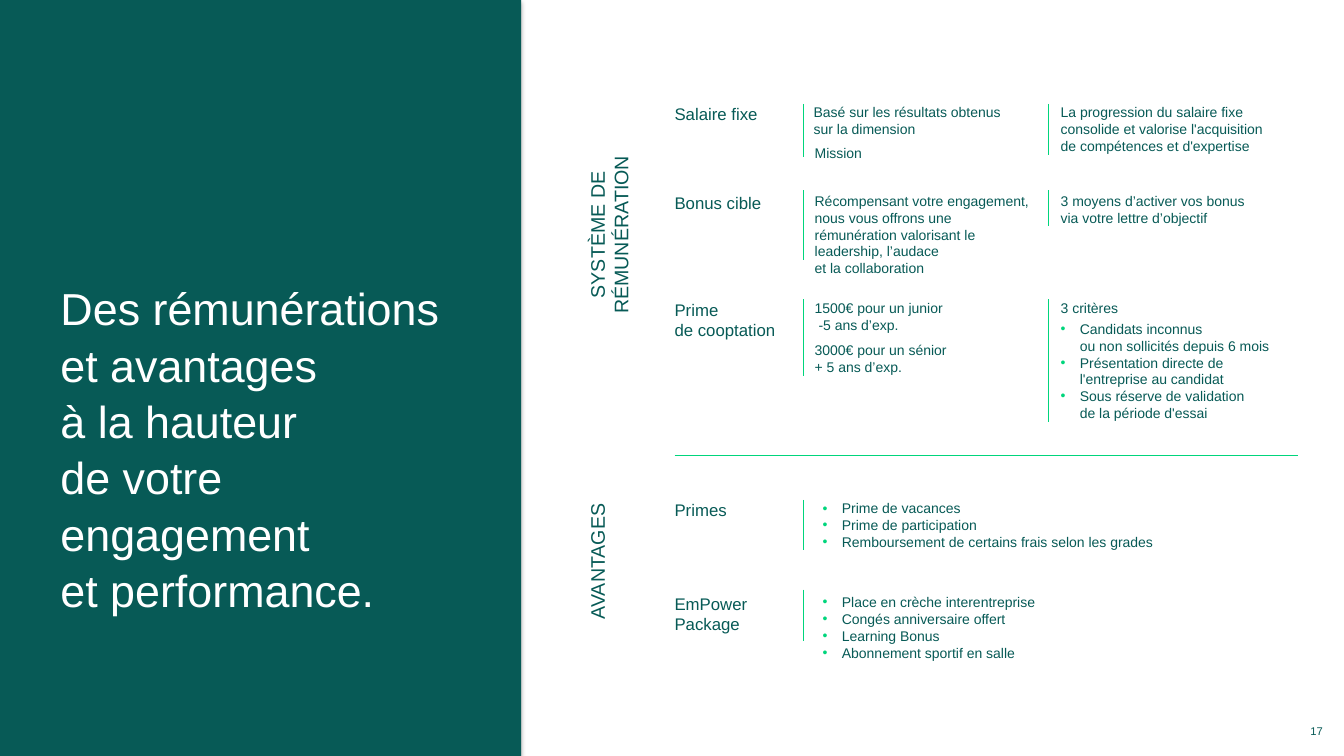
from copy import deepcopy
from dataclasses import dataclass
from typing import Optional

import pptx
import pptx.dml.color
import pptx.enum.shapes
import pptx.enum.text
import pptx.oxml
import pptx.oxml.ns
import pptx.util
from lxml import etree

Inches = pptx.util.Inches
Pt = pptx.util.Pt
qn = pptx.oxml.ns.qn
ALIGN = pptx.enum.text.PP_ALIGN

COLORS = {"teal": "075A56", "green": "00D57C", "white": "FFFFFF", "black": "000000"}
HEADING_LEFT, DETAIL_BAR, NOTE_BAR, NOTE_LEFT = 6.69, 7.97, 10.4, 10.52
BULLET_INDENT = Inches(0.19)

TITLE = {"size": 32, "color": "white", "para": {"alignment": ALIGN.LEFT, "line_spacing": 1.05}}
SECTION = {"size": 14, "color": "teal", "para": {"alignment": ALIGN.CENTER}}
HEADING = {"size": 12, "color": "teal", "para": {"alignment": ALIGN.LEFT}}
BODY = {"size": 10, "color": "teal", "para": {"space_before": Pt(3), "space_after": Pt(3)}}
BULLET = {"size": 10, "color": "teal", "bullet": True, "para": {"space_after": Pt(0)}}
NUMBER = {"size": 8, "color": "teal", "para": {"alignment": ALIGN.RIGHT}}


@dataclass
class Cell:
    left: float
    width: float
    height: float
    bar_end: float
    body: tuple[str, ...] = ()
    bullets: tuple[str, ...] = ()


@dataclass
class Row:
    top: float
    bar_top: float
    heading: str
    heading_height: float
    detail: Cell
    note: Optional[Cell] = None


@dataclass
class Section:
    label: str
    left: float
    top: float
    width: float


SECTIONS = [
    Section("SYSTÈME DE RÉMUNÉRATION", 4.63, 2.21, 2.59),
    Section("AVANTAGES", 5.08, 5.45, 1.69),
]

ROWS = [
    Row(1.03, 1.03, "Salaire fixe", 0.2,
        Cell(8.07, 2.18, 0.34, 1.56, ("Basé sur les résultats obtenus\nsur la dimension",)),
        Cell(NOTE_LEFT, 2.21, 0.5, 1.54,
             ("La progression du salaire fixe consolide et valorise l'acquisition\n"
              "de compétences et d'expertise",))),
    Row(1.91, 1.89, "Bonus cible", 0.2,
        Cell(8.08, 2.18, 0.67, 2.58,
             ("Récompensant votre engagement, nous vous offrons une rémunération "
              "valorisant le leadership, l’audace\net la collaboration",)),
        Cell(NOTE_LEFT, 2.21, 0.34, 2.24,
             ("3 moyens d’activer vos bonus\nvia votre lettre d’objectif",))),
    Row(2.97, 2.97, "Prime\nde cooptation", 0.4,
        Cell(8.08, 2.18, 0.76, 3.73,
             ("1500€ pour un junior\n -5 ans d’exp.", "3000€ pour un sénior\n+ 5 ans d’exp.")),
        Cell(NOTE_LEFT, 2.21, 1.22, 4.19, ("3 critères",),
             ("Candidats inconnus\nou non sollicités depuis 6 mois",
              "Présentation directe de l'entreprise au candidat",
              "Sous réserve de validation\nde la période d'essai"))),
    Row(4.96, 4.96, "Primes", 0.2,
        Cell(8.16, 4.04, 0.5, 5.46, (),
             ("Prime de vacances", "Prime de participation",
              "Remboursement de certains frais selon les grades"))),
    Row(5.89, 5.85, "EmPower Package", 0.4,
        Cell(8.16, 2.18, 0.67, 6.36, (),
             ("Place en crèche interentreprise", "Congés anniversaire offert",
              "Learning Bonus", "Abonnement sportif en salle"))),
]


def rgb(name: str):
    return pptx.dml.color.RGBColor.from_string(COLORS[name])


def add_bullet(p) -> None:
    pPr = p._p.get_or_add_pPr()
    pPr.set("marL", str(BULLET_INDENT))
    pPr.set("indent", str(-BULLET_INDENT))
    color = etree.SubElement(pPr, qn("a:buClr"))
    etree.SubElement(color, qn("a:srgbClr")).set("val", COLORS["green"])
    etree.SubElement(pPr, qn("a:buFont")).set("typeface", "Arial")
    etree.SubElement(pPr, qn("a:buChar")).set("char", "•")


def fill_text(sp, items: list[tuple[str, dict]], wrap: bool = True) -> None:
    tf = sp.text_frame
    frame = {"margin_left": 0, "margin_right": 0, "margin_top": 0, "margin_bottom": 0,
             "word_wrap": wrap, "auto_size": pptx.enum.text.MSO_AUTO_SIZE.NONE,
             "vertical_anchor": pptx.enum.text.MSO_ANCHOR.TOP}
    for name, value in frame.items():
        setattr(tf, name, value)
    for i, (text, style) in enumerate(items):
        p = tf.add_paragraph() if i else tf.paragraphs[0]
        p.text = text
        if style.get("bullet"):
            add_bullet(p)
        for name, value in style["para"].items():
            if i or name != "space_before":
                setattr(p, name, value)
        for r in p.runs:
            for name, value in {"name": "Arial", "size": Pt(style["size"])}.items():
                setattr(r.font, name, value)
            r.font.color.rgb = rgb(style["color"])
        for br in p._p.findall(qn("a:br")):
            br.append(deepcopy(p.runs[0]._r.rPr))


def add_text(s, left: float, top: float, width: float, height: float,
             items: list[tuple[str, dict]], wrap: bool = True):
    sp = s.shapes.add_textbox(Inches(left), Inches(top), Inches(width), Inches(height))
    fill_text(sp, items, wrap)
    return sp


def add_rule(s, x1: float, y1: float, x2: float, y2: float) -> None:
    line = s.shapes.add_connector(pptx.enum.shapes.MSO_CONNECTOR.STRAIGHT,
                                  Inches(x1), Inches(y1), Inches(x2), Inches(y2))
    line.line.color.rgb = rgb("green")
    line.line.width = Pt(0.25)
    etree.SubElement(line._element.spPr, qn("a:effectLst"))


def add_panel(s) -> None:
    sp = s.shapes.add_shape(pptx.enum.shapes.MSO_SHAPE.RECTANGLE, 0, 0, Inches(5.17), Inches(7.5))
    sp.fill.solid()
    sp.fill.fore_color.rgb = rgb("teal")
    sp.line.fill.background()
    sp.shadow.inherit = False
    shadow = etree.SubElement(sp._element.spPr.find(qn("a:effectLst")), qn("a:outerShdw"))
    for name, value in {"blurRad": Pt(3), "dist": Pt(1.8), "dir": 5400000, "rotWithShape": 0}.items():
        shadow.set(name, str(int(value)))
    color = etree.SubElement(shadow, qn("a:srgbClr"))
    color.set("val", COLORS["black"])
    etree.SubElement(color, qn("a:alpha")).set("val", "35000")
    s.shapes.element.insert(2, sp._element)


def add_cell(s, row: Row, cell: Cell, bar: float) -> None:
    add_rule(s, bar, row.bar_top, bar, cell.bar_end)
    items = [(t, BODY) for t in cell.body] + [(t, BULLET) for t in cell.bullets]
    add_text(s, cell.left, row.top, cell.width, cell.height, items)


def main() -> None:
    prs = pptx.Presentation()
    prs.slide_width, prs.slide_height = Inches(13.33), Inches(7.5)
    s = prs.slides.add_slide(prs.slide_layouts[5])
    add_panel(s)

    title = s.shapes.title
    box = {"left": 0.6, "top": 2.76, "width": 4.08, "height": 2.95}
    for name, value in box.items():
        setattr(title, name, Inches(value))
    fill_text(title, [("Des rémunérations\net avantages", TITLE),
                      ("à la hauteur\nde votre engagement\net performance.", TITLE)])

    add_rule(s, HEADING_LEFT, 4.52, 12.87, 4.52)
    for section in SECTIONS:
        sp = add_text(s, section.left, section.top, section.width, 0.24, [(section.label, SECTION)])
        sp.rotation = 270
    for row in ROWS:
        add_text(s, HEADING_LEFT, row.top, 1.22, row.heading_height, [(row.heading, HEADING)])
        add_cell(s, row, row.detail, DETAIL_BAR)
        if row.note:
            add_cell(s, row, row.note, NOTE_BAR)
    add_text(s, 8.08, 1.43, 0.61, 0.17, [("Mission", BODY)])
    add_text(s, 12.93, 7.19, 0.19, 0.13, [("17", NUMBER)], wrap=False)
    prs.save("out.pptx")


if __name__ == "__main__":
    main()
